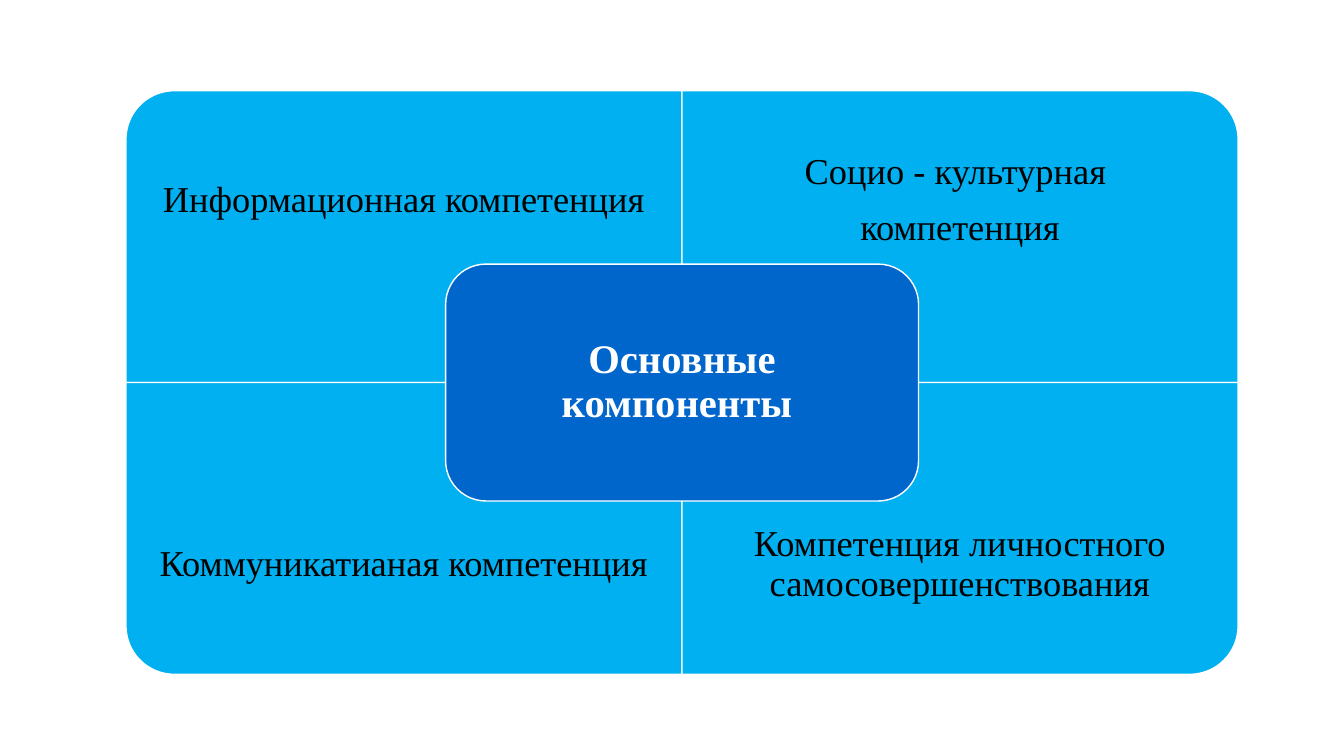
import math
from collections import namedtuple

from pptx import Presentation
from pptx.dml.color import RGBColor
from pptx.enum import shapes, text
from pptx import util as u

PX = 9144  # EMU in one px, 100 px to the inch
COLORS = {"quadrant": "00B0F0", "center": "0066CC", "white": "FFFFFF", "black": "000000"}
FONT = "Times New Roman"
CORNER_RADIUS = 48
ARC_STEPS = 24

Box = namedtuple("Box", "left top width height")
MATRIX = Box(125, 90, 1103, 579)
CENTER_SIZE = (469, 235)

# (column, row): paragraphs
COMPETENCES = {
    (0, 0): ["Информационная компетенция"],
    (1, 0): ["Социо - культурная ", "компетенция"],
    (0, 1): ["Коммуникатианая компетенция"],
    (1, 1): ["Компетенция личностного самосовершенствования"],
}


def emu(px):
    return u.Emu(round(px * PX))


def color(name):
    return RGBColor.from_string(COLORS[name])


def style_shape(shape, fill):
    shape.shadow.inherit = False
    shape.fill.solid()
    shape.fill.fore_color.rgb = color(fill)
    shape.line.color.rgb = color("white")
    shape.line.width = u.Pt(1)


def write_text(shape, paragraphs, margins, size, font_color, bold=False):
    frame = shape.text_frame
    frame.word_wrap = True
    frame.vertical_anchor = text.MSO_ANCHOR.MIDDLE
    for side, margin in zip(("left", "top", "right", "bottom"), margins):
        setattr(frame, f"margin_{side}", emu(margin))
    paragraph_format = {
        "alignment": text.PP_ALIGN.CENTER,
        "line_spacing": 0.9,
        "space_after": u.Pt(12),
    }
    font_format = {"name": FONT, "size": u.Pt(size), "bold": bold}
    for index, words in enumerate(paragraphs):
        paragraph = frame.add_paragraph() if index else frame.paragraphs[0]
        run = paragraph.add_run()
        run.text = words
        for name, value in paragraph_format.items():
            setattr(paragraph, name, value)
        for name, value in font_format.items():
            setattr(run.font, name, value)
        run.font.color.rgb = color(font_color)


def add_quadrant(slide, box, column, row, paragraphs):
    """Draw one quarter of the box, rounded at its outer corner."""
    middle_x, middle_y = box.left + box.width / 2, box.top + box.height / 2
    corner_x, corner_y = box.left + column * box.width, box.top + row * box.height
    toward_x, toward_y = 1 - 2 * column, 1 - 2 * row

    outline = [(corner_x, middle_y)]
    for step in range(ARC_STEPS + 1):
        angle = math.pi / 2 * step / ARC_STEPS
        outline.append((
            corner_x + toward_x * CORNER_RADIUS * (1 - math.cos(angle)),
            corner_y + toward_y * CORNER_RADIUS * (1 - math.sin(angle)),
        ))
    outline.append((middle_x, corner_y))

    builder = slide.shapes.build_freeform(emu(middle_x), emu(middle_y))
    builder.add_line_segments([(emu(x), emu(y)) for x, y in outline], close=True)
    shape = builder.convert_to_shape()
    style_shape(shape, "quadrant")
    # The wide margin keeps the text clear of the center
    margins = (23, 95, 23, 23) if row else (23, 23, 23, 95)
    write_text(shape, paragraphs, margins, 26, "black")


def add_center(slide, box):
    """Draw the rounded title in the middle of the box."""
    width, height = CENTER_SIZE
    shape = slide.shapes.add_shape(
        shapes.MSO_SHAPE.ROUNDED_RECTANGLE,
        emu(box.left + (box.width - width) / 2),
        emu(box.top + (box.height - height) / 2),
        emu(width),
        emu(height),
    )
    shape.adjustments[0] = 0.17
    style_shape(shape, "center")
    write_text(shape, ["Основные компоненты "], (24,) * 4, 29, "white", bold=True)


def add_matrix(slide, box):
    for (column, row), paragraphs in COMPETENCES.items():
        add_quadrant(slide, box, column, row, paragraphs)
    add_center(slide, box)


def main():
    presentation = Presentation()
    presentation.slide_width = emu(1333)
    presentation.slide_height = emu(750)
    slide = presentation.slides.add_slide(presentation.slide_layouts[6])
    add_matrix(slide, MATRIX)
    presentation.save("out.pptx")


if __name__ == "__main__":
    main()
